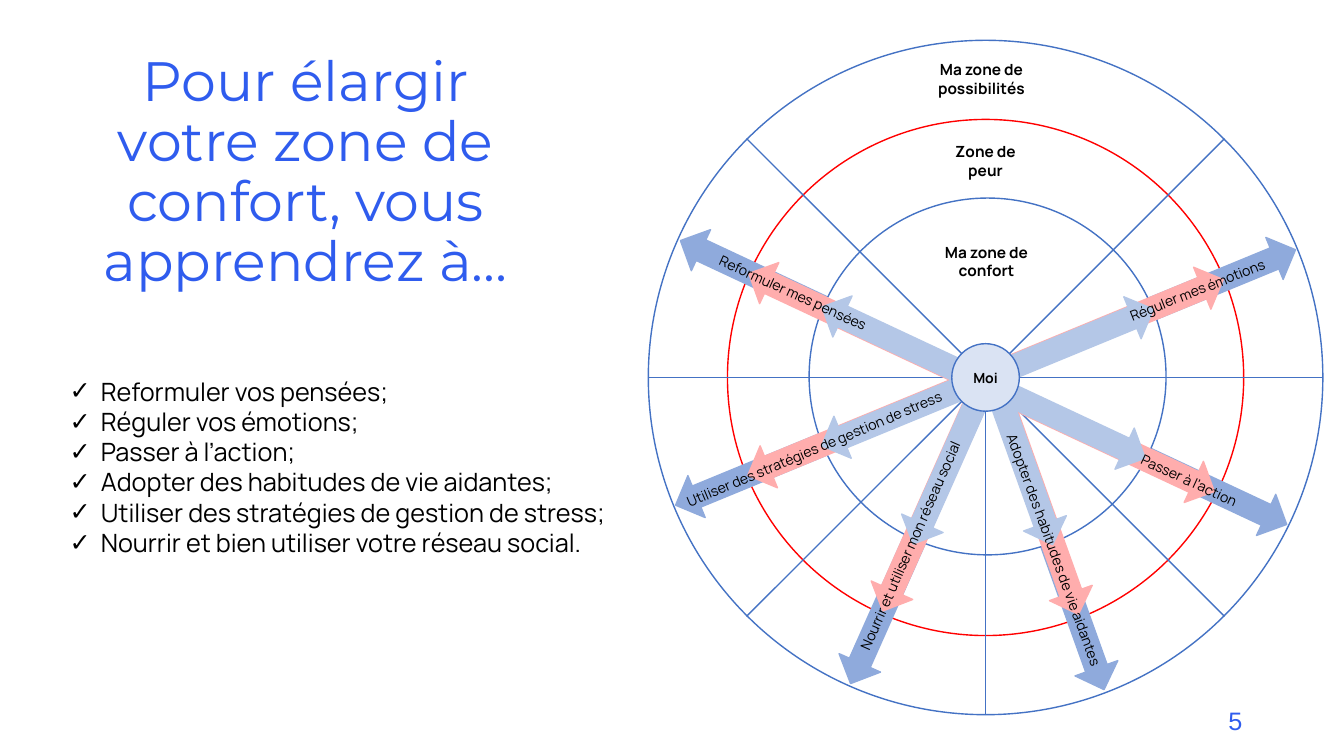
from lxml.etree import SubElement
from pptx import Presentation
from pptx.dml.color import RGBColor
from pptx.enum.shapes import MSO_CONNECTOR, MSO_SHAPE
from pptx.enum.text import MSO_ANCHOR, MSO_AUTO_SIZE, PP_ALIGN
from pptx.oxml.ns import qn
from pptx.util import Pt

PX = 9144

TITLE_BLUE = RGBColor(0x2F, 0x5C, 0xEE)
LINE_BLUE = RGBColor(0x44, 0x72, 0xC4)
RED = RGBColor(0xFF, 0x00, 0x00)
DEEP_BLUE = RGBColor(0x8F, 0xAA, 0xDC)
PINK = RGBColor(0xFF, 0xAD, 0xAD)
LIGHT_BLUE = RGBColor(0xB4, 0xC7, 0xE7)
PALE_BLUE = RGBColor(0xDA, 0xE3, 0xF3)
WHITE = RGBColor(0xFF, 0xFF, 0xFF)
BLACK = RGBColor(0x00, 0x00, 0x00)

SKILLS = [
    "Reformuler vos pensées;",
    "Réguler vos émotions;",
    "Passer à l’action;",
    "Adopter des habitudes de vie aidantes;",
    "Utiliser des stratégies de gestion de stress;",
    "Nourrir et bien utiliser votre réseau social.",
]

ARROW_HEIGHT = 45
ARROW_ANGLES = [250.3, 294, 337.6, 25.1]
POSSIBILITY_ARROWS = [(55, 135, 371), (-57, 131, 378), (0, 0, 665), (-2, 5, 664)]
FEAR_ARROWS = [(46, 106, 274), (-46, 106, 275), (0, 0, 510), (-4, 5, 510)]
COMFORT_ARROWS = [(34, 75, 193), (-33, 78, 191), (2, 0, 356), (-2, 5, 354)]

SPOKES = [
    (-237, -237, 237, 237),
    (-237, 237, 237, -237),
    (0, 335, 0, 34),
    (-335, 0, 335, 0),
]

ZONE_LABELS = [
    ("Ma zone de\vpossibilités", -4, -296, 185),
    ("Zone de\vpeur", 0, -215, 116),
    ("Ma zone de\vconfort", 1, -115, 158),
]

ARROW_LABELS = [
    ("Reformuler mes pensées", -191, -84, 252, 24.6),
    ("Passer à l’action", 202, 102, 136, 24.7),
    ("Utiliser des stratégies de gestion de stress", -170, 71, 301, 337.2),
    ("Réguler mes émotions", 210, -87, 202, 338.5),
    ("Nourrir et utiliser mon réseau social", -75, 167, 292, 293.8),
    ("Adopter des habitudes de vie aidantes", 68, 171, 298, 69.8),
]


def set_font(paragraph, name, size, color, bold=False):
    font = paragraph.font
    font.name = name
    font.size = Pt(size)
    font.color.rgb = color
    font.bold = bold


def place(shape, left, top, width, height):
    shape.left, shape.top = round(left * PX), round(top * PX)
    shape.width, shape.height = round(width * PX), round(height * PX)


def add_title(slide, left, top, width, height):
    title = slide.shapes.title
    place(title, left, top, width, height)
    frame = title.text_frame
    frame.auto_size = MSO_AUTO_SIZE.NONE
    frame.vertical_anchor = MSO_ANCHOR.MIDDLE
    frame.text = "Pour élargir votre zone de confort, vous apprendrez à…"
    paragraph = frame.paragraphs[0]
    paragraph.alignment = PP_ALIGN.CENTER
    paragraph.line_spacing = 0.9
    set_font(paragraph, "Montserrat", 39.6, TITLE_BLUE)


def add_skill_list(slide, left, top, width, height):
    body = slide.placeholders[1]
    place(body, left, top, width, height)
    frame = body.text_frame
    frame.auto_size = MSO_AUTO_SIZE.NONE
    frame.vertical_anchor = MSO_ANCHOR.TOP
    frame.text = "\n".join(SKILLS)
    for paragraph in frame.paragraphs:
        properties = paragraph._p.get_or_add_pPr()
        properties.set("marL", str(31 * PX))
        properties.set("indent", str(-31 * PX))
        SubElement(properties, qn("a:buChar"), char="✓")
        paragraph.space_before = Pt(0)
        set_font(paragraph, "Manrope", 18, BLACK)


def add_label(slide, text, left, top, width, height, size, bold=False):
    label = slide.shapes.add_textbox(0, 0, 0, 0)
    place(label, left, top, width, height)
    frame = label.text_frame
    frame.word_wrap = False
    frame.vertical_anchor = MSO_ANCHOR.MIDDLE
    frame.text = text
    frame.paragraphs[0].alignment = PP_ALIGN.CENTER
    set_font(frame.paragraphs[0], "Manrope", size, BLACK, bold)
    return label


def add_centred_shape(slide, kind, x, y, width, height, fill, line):
    shape = slide.shapes.add_shape(kind, 0, 0, 0, 0)
    place(shape, x - width / 2, y - height / 2, width, height)
    shape.shadow.inherit = False
    shape.fill.solid()
    shape.fill.fore_color.rgb = fill
    shape.line.color.rgb = line
    shape.line.width = Pt(1)
    return shape


def add_circle(slide, x, y, diameter, fill, line):
    return add_centred_shape(slide, MSO_SHAPE.OVAL, x, y, diameter, diameter, fill, line)


def add_arrows(slide, x, y, arrows, color):
    for angle, (dx, dy, length) in zip(ARROW_ANGLES, arrows):
        arrow = add_centred_shape(slide, MSO_SHAPE.LEFT_RIGHT_ARROW, x + dx, y + dy,
                                  length, ARROW_HEIGHT, color, color)
        arrow.rotation = angle


def add_spokes(slide, x, y):
    for x1, y1, x2, y2 in SPOKES:
        spoke = slide.shapes.add_connector(
            MSO_CONNECTOR.STRAIGHT,
            round((x + x1) * PX), round((y + y1) * PX),
            round((x + x2) * PX), round((y + y2) * PX))
        spoke.line.color.rgb = LINE_BLUE
        spoke.line.width = Pt(1)
        SubElement(spoke._element.spPr, qn("a:effectLst"))


def add_wheel(slide, left, top, diameter):
    x, y = left + diameter / 2, top + diameter / 2
    add_circle(slide, x, y, diameter, WHITE, LINE_BLUE)
    add_circle(slide, x, y, 512, WHITE, RED)
    add_arrows(slide, x, y, POSSIBILITY_ARROWS, DEEP_BLUE)
    add_circle(slide, x + 2, y - 1, 354, WHITE, LINE_BLUE)
    add_spokes(slide, x, y)
    add_arrows(slide, x, y, FEAR_ARROWS, PINK)
    add_arrows(slide, x, y, COMFORT_ARROWS, LIGHT_BLUE)
    for text, dx, dy, width in ZONE_LABELS:
        add_label(slide, text, x + dx - width / 2, y + dy - 23, width, 46, 11, True)
    for text, dx, dy, width, angle in ARROW_LABELS:
        label = add_label(slide, text, x + dx - width / 2, y + dy - 14, width, 28, 10)
        label.rotation = angle
    me = add_circle(slide, x, y, 67, PALE_BLUE, LINE_BLUE)
    frame = me.text_frame
    frame.word_wrap = False
    frame.vertical_anchor = MSO_ANCHOR.MIDDLE
    frame.text = "Moi"
    frame.paragraphs[0].alignment = PP_ALIGN.CENTER
    set_font(frame.paragraphs[0], "Manrope", 10, BLACK, True)


def add_page_number(slide, left, top, width, height):
    number = slide.shapes.add_textbox(0, 0, 0, 0)
    place(number, left, top, width, height)
    number.text_frame.word_wrap = True
    number.text_frame.text = "5"
    paragraph = number.text_frame.paragraphs[0]
    paragraph.alignment = PP_ALIGN.RIGHT
    set_font(paragraph, "Arial", 18, TITLE_BLUE)


def main():
    presentation = Presentation()
    presentation.slide_width = 1333 * PX
    presentation.slide_height = 750 * PX
    slide = presentation.slides.add_slide(presentation.slide_layouts[1])
    add_title(slide, 58, 31, 490, 282)
    add_page_number(slide, 942, 695, 300, 40)
    add_skill_list(slide, 59, 368, 552, 192)
    add_wheel(slide, 643, 40, 669)
    presentation.save("out.pptx")


if __name__ == "__main__":
    main()
